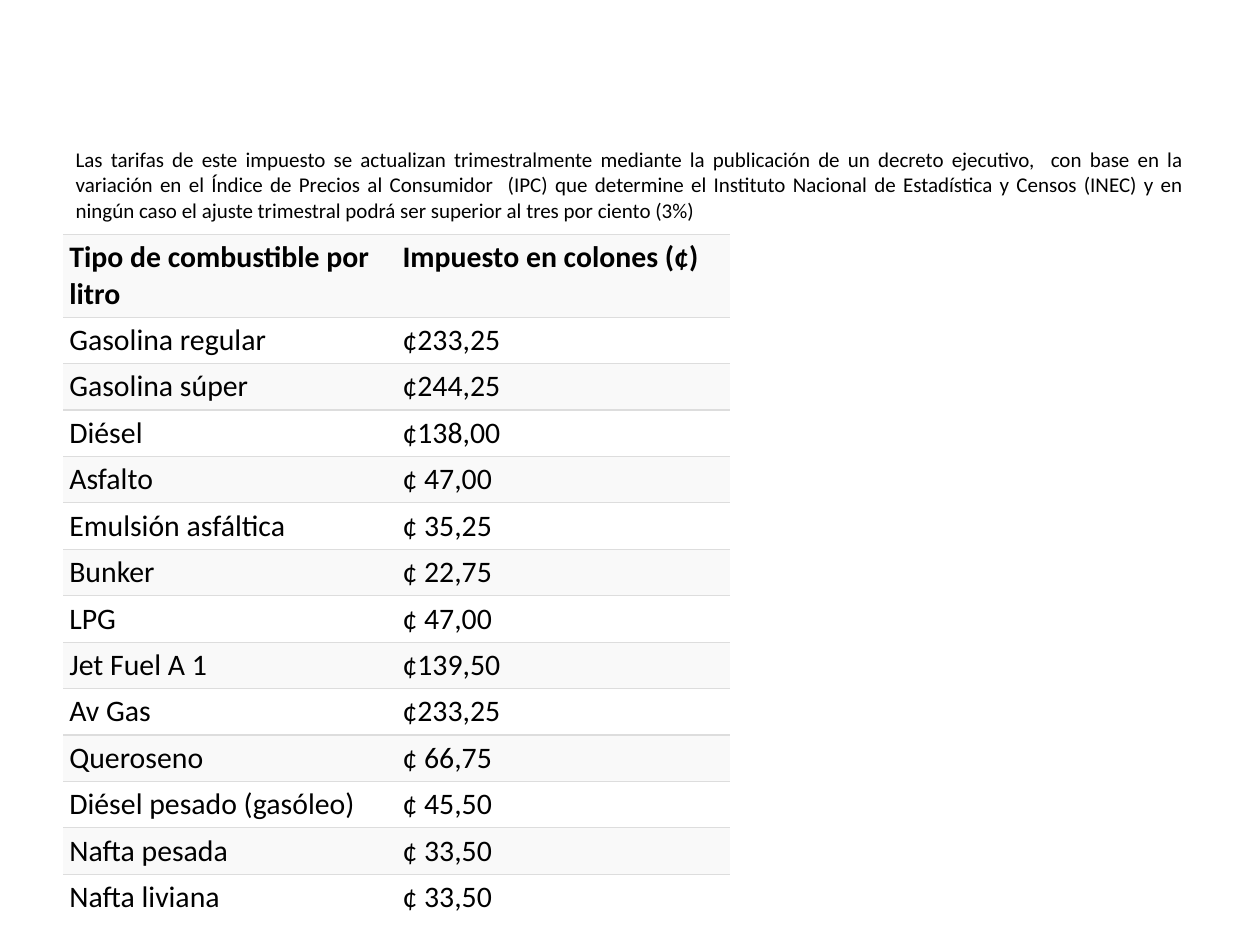
"""Builds the slide with the fuel tax rates per litre."""
from dataclasses import dataclass
from typing import Optional

from lxml.etree import SubElement
from pptx import Presentation
from pptx.dml.color import RGBColor
from pptx.enum.text import MSO_ANCHOR, MSO_AUTO_SIZE, PP_ALIGN
from pptx.oxml.ns import qn
from pptx.slide import Slide
from pptx.table import _Cell
from pptx.text.text import _Paragraph
from pptx.util import Inches, Pt

COLORS = {"text": "000000", "odd": "F9F9F9", "even": "FFFFFF", "rule": "DDDDDD"}
CELL_MARGINS = {
    "margin_left": Inches(0.05),
    "margin_right": Inches(0.05),
    "margin_top": Inches(0.04),
    "margin_bottom": Inches(0.04),
}
NOTICE = (
    "Las tarifas de este impuesto se actualizan trimestralmente mediante la "
    "publicación de un decreto ejecutivo,  con base en la variación en el Índice "
    "de Precios al Consumidor  (IPC) que determine el Instituto Nacional de "
    "Estadística y Censos (INEC) y en ningún caso el ajuste trimestral podrá ser "
    "superior al tres por ciento (3%)"
)


@dataclass
class Rate:
    fuel: str
    tax: str


RATES = [
    Rate("Tipo de combustible por litro", "Impuesto en colones (¢)"),
    Rate("Gasolina regular", "¢233,25"),
    Rate("Gasolina súper", "¢244,25"),
    Rate("Diésel", "¢138,00"),
    Rate("Asfalto", "¢ 47,00"),
    Rate("Emulsión asfáltica", "¢ 35,25"),
    Rate("Bunker", "¢ 22,75"),
    Rate("LPG", "¢ 47,00"),
    Rate("Jet Fuel A 1", "¢139,50"),
    Rate("Av Gas", "¢233,25"),
    Rate("Queroseno", "¢ 66,75"),
    Rate("Diésel pesado (gasóleo)", "¢ 45,50"),
    Rate("Nafta pesada", "¢ 33,50"),
    Rate("Nafta liviana", "¢ 33,50"),
]


def write(paragraph: _Paragraph, words: str, size: float, bold: bool = False) -> None:
    run = paragraph.add_run()
    run.text = words
    formats = {"name": "Calibri", "size": Pt(size), "bold": bold}
    for attribute, value in formats.items():
        setattr(run.font, attribute, value)
    run.font.color.rgb = RGBColor.from_string(COLORS["text"])


def add_border(cell: _Cell, side: str, color: Optional[str]) -> None:
    border = SubElement(cell._tc.get_or_add_tcPr(), qn(f"a:{side}"), w=str(Pt(0.75)))
    if color is None:
        SubElement(border, qn("a:noFill"))
    else:
        SubElement(SubElement(border, qn("a:solidFill")), qn("a:srgbClr"), val=color)


def format_cell(cell: _Cell, words: str, row: int) -> None:
    for attribute, value in CELL_MARGINS.items():
        setattr(cell, attribute, value)
    last = row == len(RATES) - 1
    borders = {
        "lnL": None,
        "lnR": None,
        "lnT": COLORS["rule"],
        "lnB": None if last else COLORS["rule"],
    }
    for side, color in borders.items():
        add_border(cell, side, color)
    cell.fill.solid()
    cell.fill.fore_color.rgb = RGBColor.from_string(COLORS["even" if row % 2 else "odd"])
    write(cell.text_frame.paragraphs[0], words, 17, bold=row == 0)


def place_notice(slide: Slide) -> None:
    notice = slide.shapes.title
    place = {"left": 0.5, "top": 1.07, "width": 9, "height": 0.79}
    for attribute, value in place.items():
        setattr(notice, attribute, Inches(value))
    frame = notice.text_frame
    frame.auto_size = MSO_AUTO_SIZE.NONE
    frame.vertical_anchor = MSO_ANCHOR.MIDDLE
    frame.paragraphs[0].alignment = PP_ALIGN.JUSTIFY
    write(frame.paragraphs[0], NOTICE, 12)


def add_rates(slide: Slide) -> None:
    rates = slide.shapes.add_table(
        len(RATES), 2, Inches(0.5), Inches(1.86), Inches(5.29), Inches(5.33)
    ).table
    rates.first_row = rates.horz_banding = False
    for row, rate in enumerate(RATES):
        rates.rows[row].height = Inches(0.36 if row else 0.65)
        for column, words in enumerate((rate.fuel, rate.tax)):
            format_cell(rates.cell(row, column), words, row)


def main() -> None:
    deck = Presentation()
    deck.slide_width, deck.slide_height = Inches(10), Inches(7.5)
    slide = deck.slides.add_slide(deck.slide_layouts[5])
    place_notice(slide)
    add_rates(slide)
    deck.save("out.pptx")


if __name__ == "__main__":
    main()
